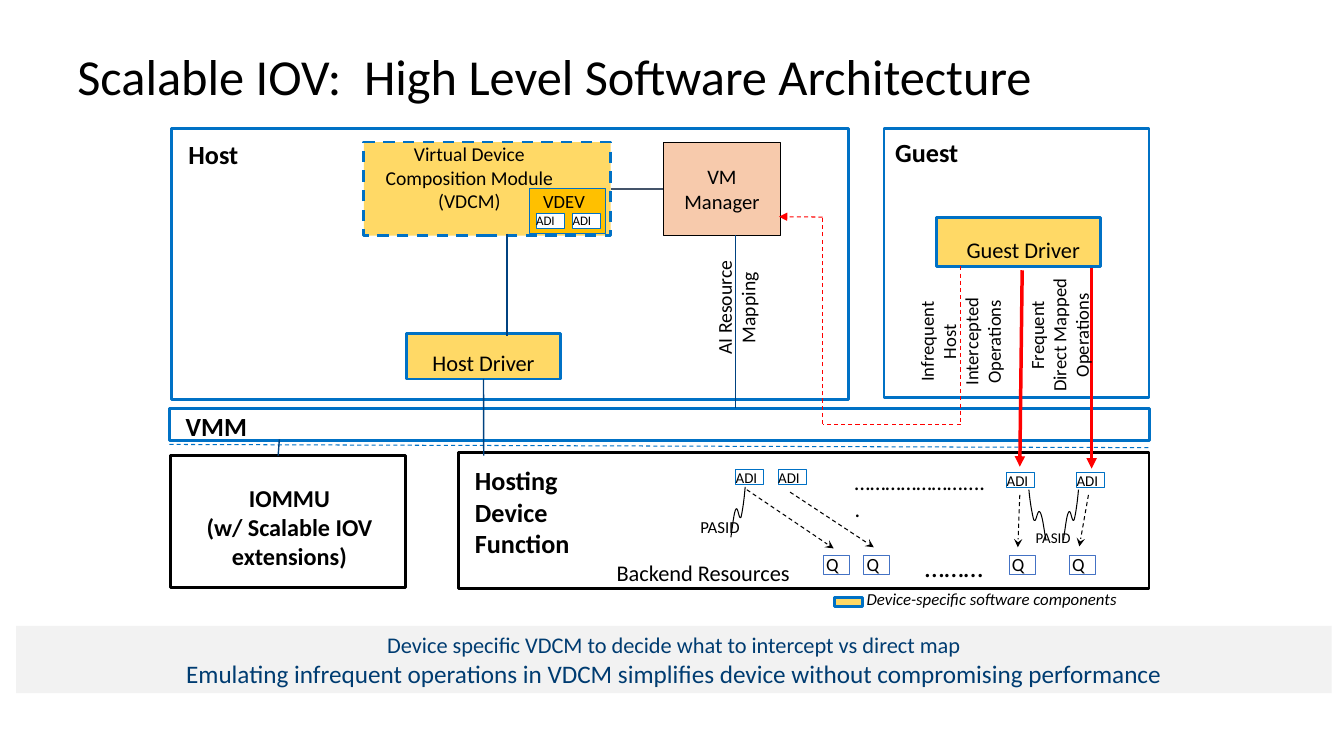
from lxml import etree
from pptx import Presentation
from pptx.dml.color import RGBColor
from pptx.enum.dml import MSO_LINE
from pptx.enum.shapes import MSO_CONNECTOR, MSO_SHAPE
from pptx.enum.text import MSO_ANCHOR, PP_ALIGN
from pptx.oxml.ns import qn
from pptx.util import Cm, Pt

RECTANGLE = MSO_SHAPE.RECTANGLE
STRAIGHT = MSO_CONNECTOR.STRAIGHT
DASH = MSO_LINE.DASH
LEFT, CENTER = PP_ALIGN.LEFT, PP_ALIGN.CENTER
TOP, MIDDLE = MSO_ANCHOR.TOP, MSO_ANCHOR.MIDDLE

BLACK = RGBColor(0x00, 0x00, 0x00)
WHITE = RGBColor(0xFF, 0xFF, 0xFF)
BLUE = RGBColor(0x00, 0x71, 0xC5)
NAVY = RGBColor(0x00, 0x3C, 0x71)
LINK_BLUE = RGBColor(0x00, 0x42, 0x80)
QUEUE_BLUE = RGBColor(0x44, 0x72, 0xC4)
SLATE = RGBColor(0x44, 0x54, 0x6A)
RED = RGBColor(0xFF, 0x00, 0x00)
YELLOW = RGBColor(0xFF, 0xD9, 0x66)
AMBER = RGBColor(0xFF, 0xC0, 0x00)
PEACH = RGBColor(0xF7, 0xCA, 0xAC)
GRAY = RGBColor(0xF2, 0xF2, 0xF2)

FONT = "Calibri"
NARROW, WIDE = (0.25, 0.13), (0.46, 0.23)

# Bezier segments of a PASID squiggle, in fractions of its box
SQUIGGLE = [
    ((1, 0), (0.93, 0.26), (0.79, 0.52), (0.71, 0.6)),
    ((0.71, 0.6), (0.57, 0.68), (0.5, 0.38), (0.36, 0.44)),
    ((0.36, 0.44), (0.21, 0.5), (0.14, 0.74), (0, 1)),
]


def add_box(shapes, place, fill, line, width=2.0, dash=None):
    shape = shapes.add_shape(RECTANGLE, *map(Cm, place))
    shape.shadow.inherit = False
    if fill is None:
        shape.fill.background()
    else:
        shape.fill.solid()
        shape.fill.fore_color.rgb = fill
    if line is None:
        shape.line.fill.background()
    else:
        shape.line.color.rgb = line
        shape.line.width = Pt(width)
        if dash:
            shape.line.dash_style = dash
    return shape


def write(shape, lines, sizes, color=BLACK, align=LEFT, inset=WIDE, anchor=TOP,
          bold=False, italic=False, wrap=True):
    frame = shape.text_frame
    frame.word_wrap = wrap
    frame.vertical_anchor = anchor
    frame.margin_left = frame.margin_right = Cm(inset[0])
    frame.margin_top = frame.margin_bottom = Cm(inset[1])
    frame.text = "\n".join(lines)
    for paragraph, size in zip(frame.paragraphs, sizes):
        paragraph.alignment = align
        font = paragraph.font
        font.name, font.size, font.color.rgb = FONT, Pt(size), color
        font.bold, font.italic = bold, italic


def add_label(shapes, place, text, size, rotation=0, **style):
    label = shapes.add_textbox(*map(Cm, place))
    label.rotation = rotation
    lines = text.split("\n")
    write(label, lines, [size] * len(lines), **style)
    return label


def add_line(shapes, ends, color, width=1.0, dash=None, arrow=None):
    connector = shapes.add_connector(STRAIGHT, *map(Cm, ends))
    connector.line.color.rgb = color
    connector.line.width = Pt(width)
    if dash:
        connector.line.dash_style = dash
    if arrow:
        etree.SubElement(connector.line._get_or_add_ln(), qn("a:tailEnd"), type=arrow)
    etree.SubElement(connector._element.spPr, qn("a:effectLst"))
    return connector


def add_tag(shapes, left, top, text, size):
    """A small box with its caption, grouped: ADI tags and Q queues."""
    group = shapes.add_group_shape().shapes
    if text == "ADI":
        add_box(group, (left, top, 0.71, 0.38), WHITE, BLUE, 0.75)
        place = (left - 0.25, top - 0.15, 1.12, 0.71)
    else:
        add_box(group, (left, top, 0.66, 0.48), None, QUEUE_BLUE, 0.75)
        place = (left - 0.18, top - 0.2, 0.86, 0.84)
    add_label(group, place, text, size, inset=NARROW, wrap=False)


def add_squiggle(shapes, left, top, width, height, mirrored=False):
    points = []
    for a, b, c, d in SQUIGGLE:
        for step in range(9):
            t = step / 8
            weights = ((1 - t) ** 3, 3 * t * (1 - t) ** 2, 3 * t * t * (1 - t), t ** 3)
            x, y = (sum(w * p[axis] for w, p in zip(weights, (a, b, c, d))) for axis in (0, 1))
            x = 1 - x if mirrored else x
            points.append((Cm(left + x * width), Cm(top + y * height)))
    builder = shapes.build_freeform(*points[0])
    builder.add_line_segments(points[1:], close=False)
    shape = builder.convert_to_shape()
    shape.shadow.inherit = False
    shape.fill.background()
    shape.line.color.rgb = BLACK
    shape.line.width = Pt(0.75)


def add_frame(shapes):
    """Title, bottom banner and legend."""
    title = add_label(shapes, (1.7, 1.14, 30.48, 1.7),
                      "Scalable IOV:  High Level Software Architecture", 36,
                      inset=NARROW, anchor=MIDDLE)
    title.text_frame.paragraphs[0].line_spacing = 0.9
    banner = add_box(shapes, (0.41, 15.77, 33.15, 1.7), GRAY, None)
    write(banner, ["Device specific VDCM to decide what to intercept vs direct map",
                   "Emulating infrequent operations in VDCM simplifies device "
                   "without compromising performance"],
          [16, 18], NAVY, CENTER, NARROW)
    add_label(shapes, (21.59, 14.71, 7.9, 0.76), "Device-specific software components",
              12, inset=NARROW, italic=True)
    add_box(shapes, (21.03, 15.06, 0.71, 0.23), YELLOW, BLUE)


def add_panels(shapes):
    """Host, guest, VMM, IOMMU and hosting device."""
    for place, line in [
        ((22.28, 3.23, 6.68, 6.78), BLUE),
        ((4.32, 3.23, 17.07, 6.83), BLUE),
        ((4.29, 11.48, 5.94, 3.33), BLACK),
        ((4.27, 10.29, 24.71, 0.81), BLUE),
        ((11.56, 11.4, 17.4, 3.43), BLACK),
    ]:
        add_box(shapes, place, WHITE, line)
    for place, text in [
        ((4.29, 3.25, 2.36, 1.24), "Host"),
        ((22.1, 3.2, 2.72, 1.24), "Guest"),
        ((4.22, 10.11, 2.49, 1.24), "VMM"),
        ((11.51, 11.48, 3.66, 2.84), "Hosting\nDevice\nFunction"),
    ]:
        add_label(shapes, place, text, 18.7, bold=True)
    add_label(shapes, (4.45, 11.94, 5.69, 2.67), "IOMMU\n(w/ Scalable IOV\nextensions)",
              17.3, align=CENTER, bold=True)
    add_line(shapes, (4.27, 11.2, 28.96, 11.28), BLUE, 0.75, DASH)


def add_software(shapes):
    """Drivers, VDCM with its VDEV, VM manager and their links."""
    host_driver = add_box(shapes, (10.24, 8.41, 3.89, 1.14), YELLOW, BLUE)
    add_label(shapes, (10.44, 8.56, 3.81, 1.14), "Host Driver", 16)
    add_box(shapes, (23.6, 5.49, 4.14, 1.22), YELLOW, BLUE)
    add_label(shapes, (23.9, 5.72, 4.09, 1.14), "Guest Driver", 16)
    vdcm = add_box(shapes, (9.17, 3.58, 6.22, 2.36), YELLOW, BLUE, dash=DASH)
    add_label(shapes, (8.92, 3.35, 5.82, 2.26),
              "Virtual Device Composition Module\n(VDCM)", 14, align=CENTER)
    add_box(shapes, (13.34, 4.75, 1.93, 1.14), AMBER, BLUE, 0.75)
    add_label(shapes, (13.44, 4.65, 1.73, 0.84), "VDEV", 13.3, inset=NARROW)
    for left in (13.51, 14.43):
        add_tag(shapes, left, 5.37, "ADI", 9.3)
    vm_manager = add_box(shapes, (16.71, 3.58, 2.97, 2.36), PEACH, BLACK, 0.75)
    write(vm_manager, ["VM Manager"], [14.7], align=CENTER, inset=NARROW, anchor=MIDDLE)

    manager_link = add_line(shapes, (15.39, 4.76, 16.71, 4.76), SLATE)
    manager_link.begin_connect(vdcm, 3)
    manager_link.end_connect(vm_manager, 1)
    device_link = add_line(shapes, (12.19, 9.55, 12.19, 11.48), LINK_BLUE)
    device_link.begin_connect(host_driver, 2)
    add_line(shapes, (12.78, 5.89, 12.78, 8.46), LINK_BLUE)
    add_line(shapes, (7.04, 11.07, 7.01, 11.48), LINK_BLUE)
    add_line(shapes, (18.54, 5.92, 18.54, 10.29), LINK_BLUE, 0.75)


def add_device(shapes):
    """ADI tags, queues and PASIDs inside the hosting device."""
    for left, top in [(18.54, 11.84), (19.61, 11.84), (25.37, 11.91), (27.13, 11.91)]:
        add_tag(shapes, left, top, "ADI", 10.7)
    for left in (20.75, 21.77, 25.43, 26.95):
        add_tag(shapes, left, 14, "Q", 13.3)
    add_label(shapes, (21.08, 11.56, 4.32, 1.14), "………………….....", 16)
    add_label(shapes, (23.06, 13.72, 2.41, 1.12), "………", 20, inset=NARROW)
    add_label(shapes, (15.29, 13.97, 5.51, 0.94), "Backend Resources", 16, inset=NARROW)
    add_label(shapes, (17.09, 12.78, 2.11, 0.97), "PASID", 12, align=CENTER)
    add_label(shapes, (25.55, 13.08, 1.98, 0.91), "PASID", 10.7, align=CENTER)
    add_squiggle(shapes, 18.42, 12.27, 0.36, 1.27)
    add_squiggle(shapes, 26.8, 12.34, 0.38, 1.27)
    add_squiggle(shapes, 25.93, 12.34, 0.43, 1.27, mirrored=True)
    for ends in [(18.82, 12.34, 21.01, 13.82), (19.91, 12.4, 22.02, 13.79),
                 (25.7, 12.47, 25.65, 13.79), (27.43, 12.47, 27.2, 13.77)]:
        add_line(shapes, ends, BLACK, 0.75, DASH, "stealth")


def add_operations(shapes):
    """Direct mapped and intercepted paths with their upright captions."""
    for ends in [(27.51, 6.76, 27.51, 11.81), (25.76, 6.81, 25.7, 11.76)]:
        add_line(shapes, ends, RED, 2.5, arrow="triangle")
    route = [(24.21, 6.71), (24.21, 10.69), (20.73, 10.69), (20.73, 5.47), (19.63, 5.46)]
    for start, end in zip(route, route[1:]):
        arrow = "triangle" if end == route[-1] else None
        add_line(shapes, start + end, RED, 0.75, DASH, arrow)
    for place, text, size in [
        ((24.61, 7.37, 4.17, 2.16), "Frequent\nDirect Mapped Operations", 13.3),
        ((22.53, 7.24, 3.35, 2.74), "Infrequent\nHost Intercepted Operations", 13.3),
        ((16.74, 6.93, 3.61, 1.65), "AI Resource Mapping", 14),
    ]:
        add_label(shapes, place, text, size, rotation=270, align=CENTER)


def main():
    presentation = Presentation()
    presentation.slide_width, presentation.slide_height = Cm(33.87), Cm(19.05)
    slide = presentation.slides.add_slide(presentation.slide_layouts[6])
    for add_part in (add_frame, add_panels, add_software, add_device, add_operations):
        add_part(slide.shapes)
    presentation.save("out.pptx")


if __name__ == "__main__":
    main()
